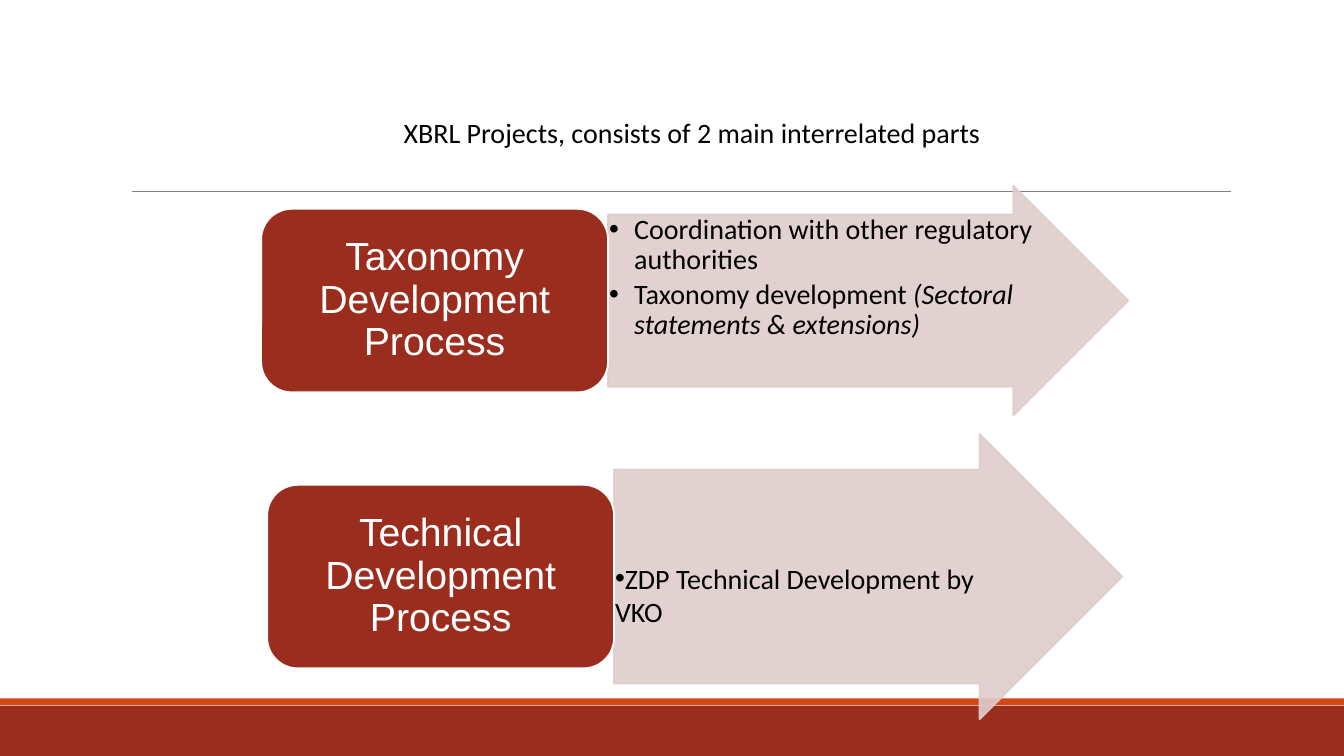
from dataclasses import dataclass

from lxml.etree import SubElement
from pptx import Presentation
from pptx.dml.color import RGBColor
from pptx.enum.shapes import MSO_CONNECTOR as Connector, MSO_SHAPE as Shape
from pptx.enum.text import MSO_ANCHOR as Anchor, PP_ALIGN as Align
from pptx.oxml.ns import qn
from pptx.util import Inches, Pt


@dataclass(frozen=True)
class Theme:
    brick: str = "9B2D1F"
    orange: str = "D34817"
    blush: str = "DECDCD"
    gray: str = "808080"
    white: str = "FFFFFF"
    black: str = "000000"
    body_font: str = "Calibri"
    label_font: str = "Arial"
    body_size: int = 20
    label_size: int = 28
    outline: float = 1.25
    hairline: float = 0.5


def write(paragraph, text, *, font, size, color, italic=False):
    run = paragraph.add_run()
    run.text = text
    run.font.name = font
    run.font.size = Pt(size)
    run.font.italic = italic
    run.font.color.rgb = RGBColor.from_string(color)


def add_bullet(paragraph, indent):
    properties = paragraph._p.get_or_add_pPr()
    properties.set("marL", str(Inches(indent)))
    properties.set("indent", str(-Inches(indent)))
    SubElement(properties, qn("a:buFont")).set("typeface", "Arial")
    SubElement(properties, qn("a:buChar")).set("char", "•")


def set_opacity(shape, percent):
    for color in shape._element.spPr.iter(qn("a:srgbClr")):
        SubElement(color, qn("a:alpha")).set("val", str(percent * 1000))


class SlideBuilder:
    def __init__(self, presentation, theme):
        self.theme = theme
        self.width = presentation.slide_width
        self.height = presentation.slide_height
        self.slide = presentation.slides.add_slide(presentation.slide_layouts[6])

    def across(self, percent):
        return round(self.width * percent / 100)

    def down(self, percent):
        return round(self.height * percent / 100)

    def place(self, left, top, width, height):
        return self.across(left), self.down(top), self.across(width), self.down(height)

    def block(self, kind, area, fill, line=None):
        shape = self.slide.shapes.add_shape(kind, *self.place(*area))
        shape.shadow.inherit = False
        shape.fill.solid()
        shape.fill.fore_color.rgb = RGBColor.from_string(fill)
        if line:
            shape.line.color.rgb = RGBColor.from_string(line)
            shape.line.width = Pt(self.theme.outline)
        else:
            shape.line.fill.background()
        return shape

    def rule(self, left, right, top):
        y = self.down(top)
        line = self.slide.shapes.add_connector(
            Connector.STRAIGHT, self.across(left), y, self.across(right), y)
        line.line.color.rgb = RGBColor.from_string(self.theme.gray)
        line.line.width = Pt(self.theme.hairline)
        SubElement(line._element.spPr, qn("a:effectLst"))

    def frame(self, shape, anchor, margins=None):
        frame = shape.text_frame
        frame.word_wrap = True
        frame.vertical_anchor = anchor
        if margins:
            (frame.margin_left, frame.margin_top,
             frame.margin_right, frame.margin_bottom) = margins
        return frame

    def body(self, paragraph, text, italic=False):
        theme = self.theme
        write(paragraph, text, font=theme.body_font, size=theme.body_size,
              color=theme.black, italic=italic)

    def title(self, area, text):
        box = self.slide.shapes.add_textbox(*self.place(*area))
        paragraph = self.frame(box, Anchor.TOP).paragraphs[0]
        paragraph.alignment = Align.CENTER
        self.body(paragraph, text)

    def label(self, area, text):
        theme = self.theme
        box = self.block(Shape.ROUNDED_RECTANGLE, area, theme.brick, theme.white)
        side, edge = Inches(0.12), Inches(0.06)
        paragraph = self.frame(box, Anchor.MIDDLE, (side, edge, side, edge)).paragraphs[0]
        paragraph.alignment = Align.CENTER
        paragraph.line_spacing = 0.9
        write(paragraph, text, font=theme.label_font, size=theme.label_size, color=theme.white)

    def arrow(self, area, items, top_margin, indent, line_spacing):
        theme = self.theme
        arrow = self.block(Shape.RIGHT_ARROW, area, theme.blush, theme.blush)
        arrow.adjustments[0], arrow.adjustments[1] = 0.75, 0.5
        set_opacity(arrow, 90)
        edge = Inches(0.01)
        frame = self.frame(arrow, Anchor.TOP, (edge, Inches(top_margin), edge, edge))
        for index, (text, emphasis) in enumerate(items):
            paragraph = frame.add_paragraph() if index else frame.paragraphs[0]
            paragraph.alignment = Align.LEFT
            paragraph.line_spacing = line_spacing
            paragraph.space_after = Pt(3)
            add_bullet(paragraph, indent)
            self.body(paragraph, text)
            if emphasis:
                self.body(paragraph, emphasis, italic=True)

    def process(self, left, middle, name, arrow_size, items, **layout):
        label_width, label_height = 25.81, 24.27
        arrow_width, arrow_height = arrow_size
        self.arrow((left + label_width, middle - arrow_height / 2, arrow_width, arrow_height),
                   items, **layout)
        self.label((left, middle - label_height / 2, label_width, label_height), name)


def main():
    presentation = Presentation()
    presentation.slide_width = Inches(13.33)
    presentation.slide_height = Inches(7.5)
    theme = Theme()
    builder = SlideBuilder(presentation, theme)

    builder.block(Shape.RECTANGLE, (0, 93.33, 100, 6.67), theme.brick)
    builder.block(Shape.RECTANGLE, (0, 92.4, 100, 0.88), theme.orange)
    builder.rule(9.83, 91.6, 25.33)
    builder.title((18.15, 14.6, 66.69, 5.87),
                  "XBRL Projects, consists of 2 main interrelated parts")
    builder.process(
        19.43, 39.76, "Taxonomy Development Process", (38.71, 30.4),
        [("Coordination with other regulatory authorities", ""),
         ("Taxonomy development ", "(Sectoral statements & extensions)")],
        top_margin=0.01, indent=0.25, line_spacing=0.9)
    builder.process(
        19.88, 76.27, "Technical Development Process", (37.81, 37.73),
        [("ZDP Technical Development by VKO", "")],
        top_margin=0.91, indent=0, line_spacing=1.0)

    presentation.save("out.pptx")


if __name__ == "__main__":
    main()
